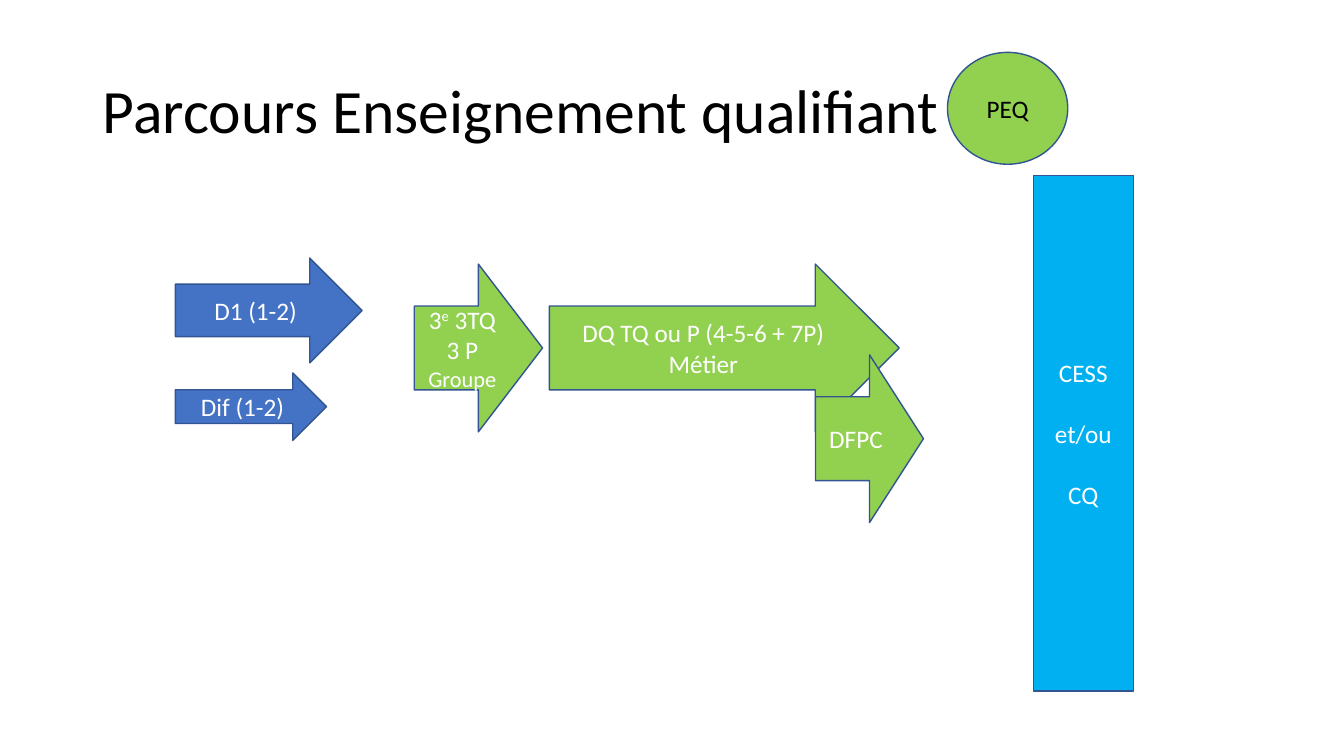
from pptx import Presentation
from pptx.dml.color import RGBColor
from pptx.enum.shapes import MSO_SHAPE as Shape
from pptx.enum.text import MSO_ANCHOR as Anchor, PP_ALIGN as Align
from pptx.util import Inches, Pt

COLORS = {
    "blue": "4472C4",
    "green": "92D050",
    "cyan": "00B0F0",
    "outline": "325491",
    "white": "FFFFFF",
    "black": "000000",
}


class Board:
    """Draws styled elements on a slide, placed in percent of its size."""

    font = "Calibri"
    size = 18

    def __init__(self, prs):
        self.prs = prs
        self.s = prs.slides.add_slide(prs.slide_layouts[6])

    def color(self, name):
        return RGBColor.from_string(COLORS[name])

    def box(self, left, top, width, height):
        w, h = self.prs.slide_width, self.prs.slide_height
        return [round(share * side / 100)
                for share, side in zip((left, top, width, height), (w, h, w, h))]

    def label(self, sp, lines, color, size=None, align=Align.CENTER, gap=0):
        tf = sp.text_frame
        tf.word_wrap = True
        tf.vertical_anchor = Anchor.MIDDLE
        for i, line in enumerate(lines):
            p = tf.paragraphs[0] if i == 0 else tf.add_paragraph()
            p.alignment = align
            p.space_before = Pt(gap if i else 0)
            p.font.name = self.font
            p.font.size = Pt(size or self.size)
            p.font.color.rgb = self.color(color)
            for j, part in enumerate(line.split("^")):
                r = p.add_run()
                r.text = part
                if j % 2:
                    r._r.get_or_add_rPr().set("baseline", "30000")
        return tf

    def title(self, text, area):
        sp = self.s.shapes.add_textbox(*self.box(*area))
        tf = self.label(sp, [text], "black", size=44, align=Align.LEFT)
        tf.paragraphs[0].line_spacing = 0.9

    def shape(self, kind, fill, lines, area, color="white", gap=0):
        sp = self.s.shapes.add_shape(kind, *self.box(*area))
        sp.shadow.inherit = False
        sp.fill.solid()
        sp.fill.fore_color.rgb = self.color(fill)
        sp.line.color.rgb = self.color("outline")
        sp.line.width = Pt(1)
        return self.label(sp, lines, color, gap=gap)

    def arrow(self, fill, lines, area):
        return self.shape(Shape.RIGHT_ARROW, fill, lines, area)


def main():
    prs = Presentation()
    prs.slide_width, prs.slide_height = Inches(13.33), Inches(7.5)
    board = Board(prs)
    board.title("Parcours Enseignement qualifiant", (6.9, 5.33, 86.25, 19.33))

    board.arrow("blue", ["D1 (1-2)"], (13.05, 34.13, 13.9, 13.87))
    board.arrow("blue", ["Dif (1-2)"], (13.05, 49.33, 11.25, 8.93))

    stage_top, stage_height = 34.93, 22.2
    group = board.arrow("green", ["3^e^ 3TQ", "3 P", "Groupe"],
                        (30.82, stage_top, 9.55, stage_height))
    group.paragraphs[-1].font.size = Pt(16)
    board.arrow("green", ["DQ TQ ou P (4-5-6 + 7P)", "Métier"],
                (40.88, stage_top, 26.03, stage_height))
    board.shape(Shape.FLOWCHART_CONNECTOR, "green", ["PEQ"],
                (70.5, 6.93, 8.95, 14.8), color="black")
    board.arrow("green", ["DFPC"], (60.68, stage_top + 12, 8.03, stage_height))

    board.shape(Shape.RECTANGLE, "cyan", ["CESS", "et/ou", "CQ"],
                (76.88, 23.2, 7.45, 68.2), gap=22)
    prs.save("out.pptx")


if __name__ == "__main__":
    main()
